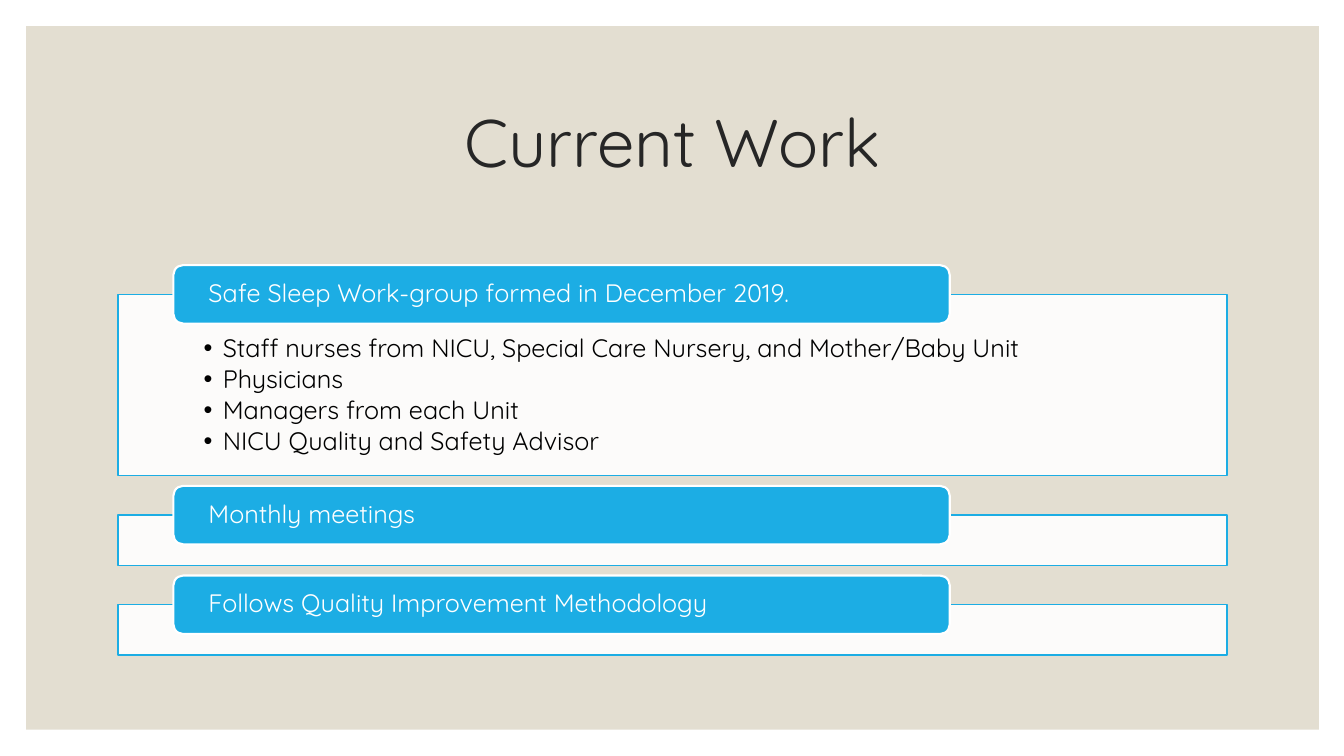
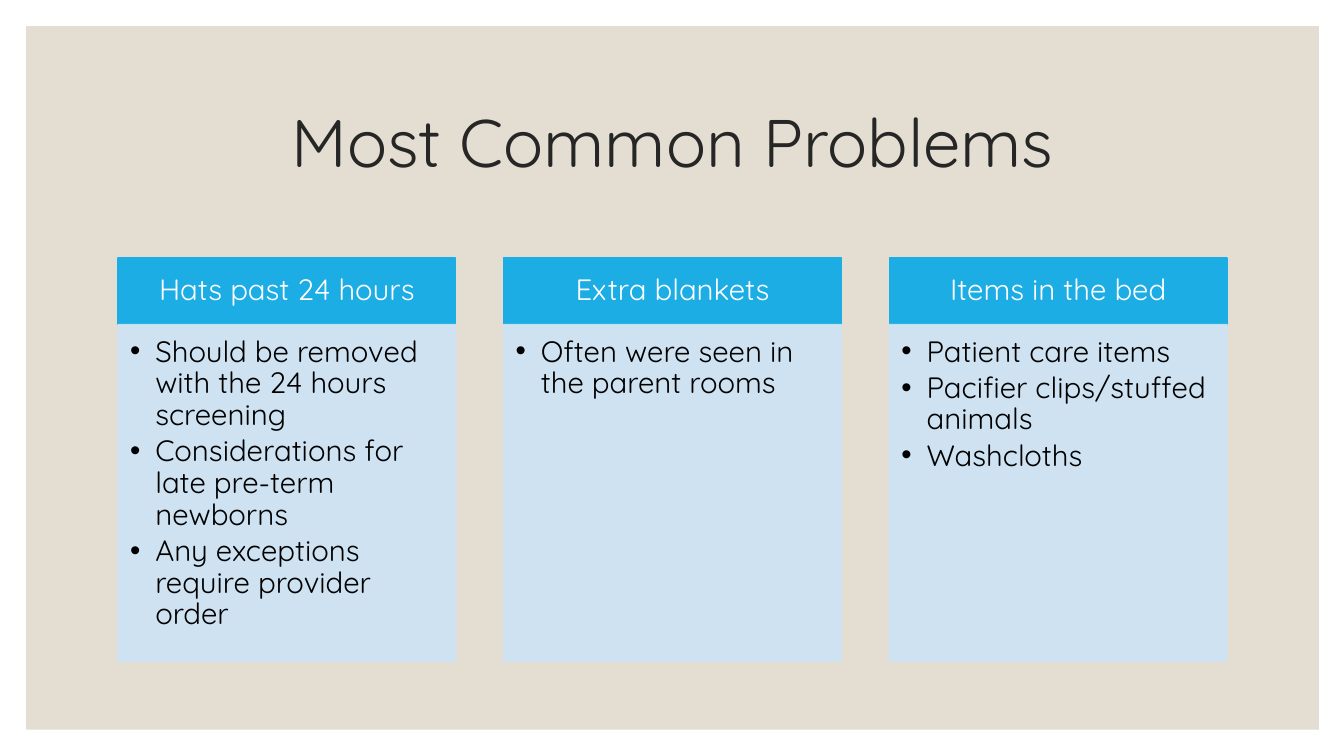
"""Build two slides on a safe sleep work-group and its most common problems."""
from dataclasses import dataclass
from typing import Optional

from lxml import etree
from pptx import Presentation
from pptx.dml.color import RGBColor
from pptx.enum.shapes import MSO_SHAPE
from pptx.enum.text import MSO_ANCHOR, PP_ALIGN
from pptx.oxml.ns import qn
from pptx.util import Inches, Pt

RECT, ROUNDED = MSO_SHAPE.RECTANGLE, MSO_SHAPE.ROUNDED_RECTANGLE
TOP, MIDDLE = MSO_ANCHOR.TOP, MSO_ANCHOR.MIDDLE
LEFT, CENTER = PP_ALIGN.LEFT, PP_ALIGN.CENTER

WHITE = RGBColor(0xFF, 0xFF, 0xFF)
BLACK = RGBColor(0x00, 0x00, 0x00)
INK = RGBColor(0x26, 0x26, 0x26)
SAND = RGBColor(0xE3, 0xDE, 0xD1)
BLUE = RGBColor(0x1C, 0xAD, 0xE4)
PALE_BLUE = RGBColor(0xCD, 0xE3, 0xF5)

FONT = "Quicksand"
MARGIN, CONTENT_W = 1.17, 11


@dataclass(frozen=True)
class TextStyle:
    size: float
    color: RGBColor
    align: PP_ALIGN = LEFT
    anchor: MSO_ANCHOR = TOP
    insets: tuple[float, float, float, float] = (0.1, 0.05, 0.1, 0.05)
    space_after: float = 0
    bullet_indent: float = 0


@dataclass(frozen=True)
class BoxStyle:
    fill: RGBColor
    line: Optional[RGBColor] = None
    line_width: float = 1
    shape: MSO_SHAPE = RECT
    fill_alpha: int = 100
    line_alpha: int = 100


@dataclass(frozen=True)
class Topic:
    heading: str
    points: tuple[str, ...] = ()
    height: float = 0.5


TITLE_TEXT = TextStyle(48, INK, CENTER, MIDDLE)
TAB_TEXT = TextStyle(18, WHITE, LEFT, MIDDLE, (0.32, 0, 0.32, 0))
PANEL_TEXT = TextStyle(18, BLACK, insets=(0.85, 0.41, 0.85, 0.14),
                       space_after=2.7, bullet_indent=0.19)
HEADER_TEXT = TextStyle(21, WHITE, CENTER, MIDDLE, (0.16, 0.09, 0.16, 0.09))
BODY_TEXT = TextStyle(21, BLACK, insets=(0.12, 0.12, 0.16, 0.18),
                      space_after=3.15, bullet_indent=0.25)

BACKDROP = BoxStyle(SAND)
TAB = BoxStyle(BLUE, WHITE, 1.5, ROUNDED)
PANEL = BoxStyle(WHITE, BLUE, fill_alpha=90)
HEADER = BoxStyle(BLUE, BLUE)
BODY = BoxStyle(PALE_BLUE, PALE_BLUE, fill_alpha=90, line_alpha=90)

WORK = (
    Topic("Safe Sleep Work-group formed in December 2019.", (
        "Staff nurses from NICU, Special Care Nursery, and Mother/Baby Unit",
        "Physicians",
        "Managers from each Unit",
        "NICU Quality and Safety Advisor",
    ), 1.8),
    Topic("Monthly meetings"),
    Topic("Follows Quality Improvement Methodology"),
)
PROBLEMS = (
    Topic("Hats past 24 hours", (
        "Should be removed with the 24 hours screening",
        "Considerations for late pre-term newborns",
        "Any exceptions require provider order",
    )),
    Topic("Extra blankets", ("Often were seen in the parent rooms",)),
    Topic("Items in the bed", (
        "Patient care items",
        "Pacifier clips/stuffed animals",
        "Washcloths",
    )),
)


def set_alpha(parent, percent: int) -> None:
    if percent < 100:
        color = parent.find(qn("a:solidFill")).find(qn("a:srgbClr"))
        etree.SubElement(color, qn("a:alpha"), val=str(percent * 1000))


def add_bullet(p, indent: float) -> None:
    pPr = p._p.get_or_add_pPr()
    pPr.set("marL", str(Inches(indent)))
    pPr.set("indent", str(-Inches(indent)))
    etree.SubElement(pPr, qn("a:buFont"), typeface="Arial")
    etree.SubElement(pPr, qn("a:buChar"), char="•")


def write_text(sp, lines: tuple[str, ...], style: TextStyle) -> None:
    tf = sp.text_frame
    left, top, right, bottom = map(Inches, style.insets)
    frame = {"word_wrap": True, "vertical_anchor": style.anchor,
             "margin_left": left, "margin_top": top,
             "margin_right": right, "margin_bottom": bottom}
    for name, value in frame.items():
        setattr(tf, name, value)
    for i, line in enumerate(lines):
        p = tf.add_paragraph() if i else tf.paragraphs[0]
        if style.bullet_indent:
            add_bullet(p, style.bullet_indent)
        layout = {"alignment": style.align, "line_spacing": 0.9,
                  "space_after": Pt(style.space_after)}
        for name, value in layout.items():
            setattr(p, name, value)
        r = p.add_run()
        r.text = line
        for name, value in {"name": FONT, "size": Pt(style.size)}.items():
            setattr(r.font, name, value)
        r.font.color.rgb = style.color


def add_box(s, x: float, y: float, w: float, h: float, style: BoxStyle):
    sp = s.shapes.add_shape(style.shape, Inches(x), Inches(y), Inches(w), Inches(h))
    sp.shadow.inherit = False
    sp.fill.solid()
    sp.fill.fore_color.rgb = style.fill
    spPr = sp._element.spPr
    set_alpha(spPr, style.fill_alpha)
    if style.line is None:
        sp.line.fill.background()
    else:
        sp.line.color.rgb = style.line
        sp.line.width = Pt(style.line_width)
        set_alpha(spPr.find(qn("a:ln")), style.line_alpha)
    return sp


def add_titled_slide(prs, title: str):
    s = prs.slides.add_slide(prs.slide_layouts[6])
    add_box(s, 0.26, 0.26, 12.82, 6.98, BACKDROP)
    sp = s.shapes.add_textbox(Inches(MARGIN), Inches(0.7), Inches(CONTENT_W), Inches(1.5))
    write_text(sp, (title,), TITLE_TEXT)
    return s


def add_tabbed_panels(s, topics: tuple[Topic, ...]) -> None:
    tab_h, gap, y = 0.58, 0.1, 2.63
    for topic in topics:
        panel_y = y + tab_h / 2
        panel = add_box(s, MARGIN, panel_y, CONTENT_W, topic.height, PANEL)
        write_text(panel, topic.points, PANEL_TEXT)
        tab = add_box(s, MARGIN + 0.55, y, CONTENT_W * 0.7, tab_h, TAB)
        write_text(tab, (topic.heading,), TAB_TEXT)
        y = panel_y + topic.height + gap


def add_columns(s, topics: tuple[Topic, ...]) -> None:
    top, header_h, body_h, col_w = 2.56, 0.66, 3.34, 3.35
    pitch = (CONTENT_W - col_w) / (len(topics) - 1)
    for i, topic in enumerate(topics):
        x = MARGIN + i * pitch
        header = add_box(s, x, top, col_w, header_h, HEADER)
        write_text(header, (topic.heading,), HEADER_TEXT)
        body = add_box(s, x, top + header_h, col_w, body_h, BODY)
        write_text(body, topic.points, BODY_TEXT)


def main() -> None:
    prs = Presentation()
    prs.slide_width, prs.slide_height = Inches(13.33), Inches(7.5)
    add_tabbed_panels(add_titled_slide(prs, "Current Work"), WORK)
    add_columns(add_titled_slide(prs, "Most Common Problems"), PROBLEMS)
    prs.save("out.pptx")


if __name__ == "__main__":
    main()
